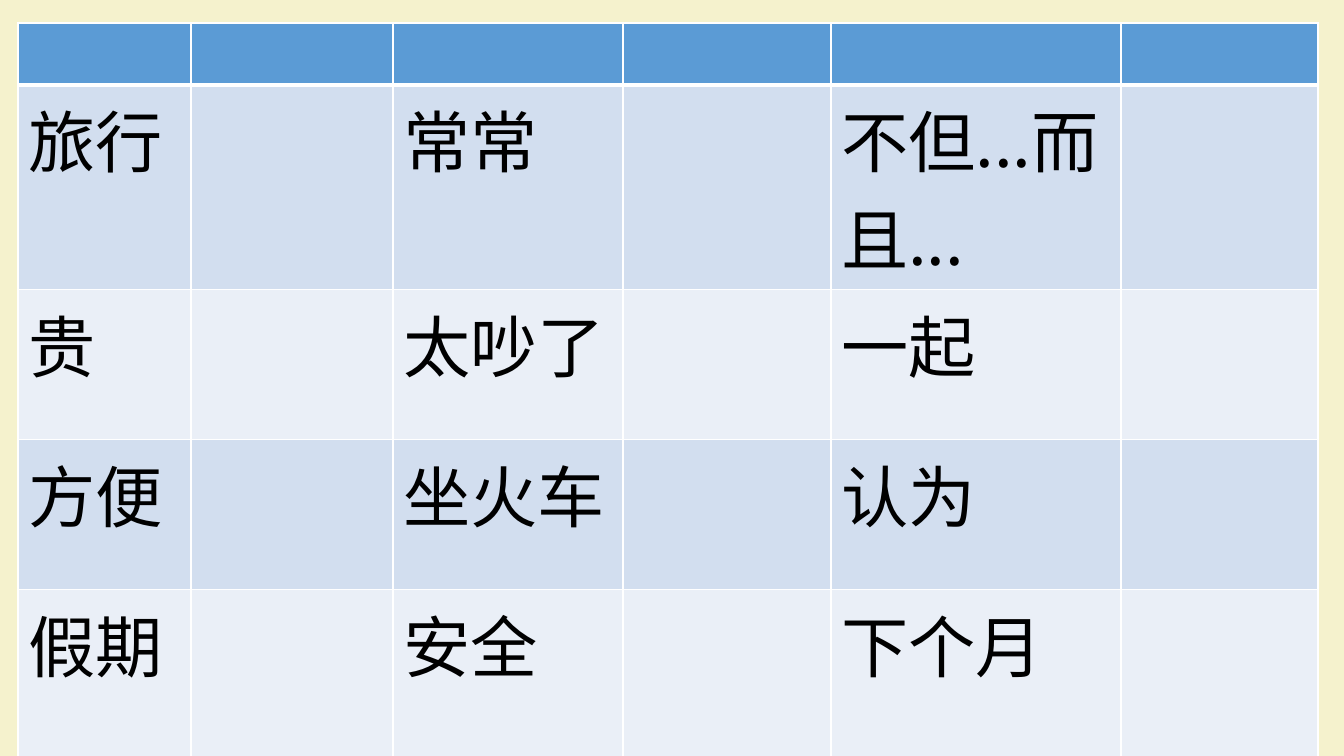
"""Builds a slide with a Chinese vocabulary table."""
from pptx import Presentation
from pptx.dml.color import RGBColor
from pptx.oxml.ns import qn
from pptx.util import Pt
from lxml.etree import SubElement

THEME = {
    "page": "F5F2CD", "head": "5B9BD5", "odd": "D2DEEF", "even": "EAEFF7",
    "line": "FFFFFF", "ink": "000000",
    "font": "Noto Sans CJK SC", "size": 48, "thin": 1, "thick": 3,
}
PX = 914400 / 100.8
WIDTHS = [173, 202, 230, 208, 290, 197]
HEIGHTS = [62, 169, 150, 150, 169]
WORDS = [
    ["旅行", "常常", "不但...而且..."],
    ["贵", "太吵了", "一起"],
    ["方便", "坐火车", "认为"],
    ["假期", "安全", "下个月"],
]


def px(count):
    return round(count * PX)


def edge(cell, side, width):
    line = SubElement(cell._tc.get_or_add_tcPr(), qn(f"a:ln{side}"), w=str(Pt(width)))
    fill = SubElement(line, qn("a:solidFill"))
    SubElement(fill, qn("a:srgbClr"), val=THEME["line"])


deck = Presentation()
deck.slide_width, deck.slide_height = px(1344), px(756)
slide = deck.slides.add_slide(deck.slide_layouts[6])
slide.background.fill.solid()
slide.background.fill.fore_color.rgb = RGBColor.from_string(THEME["page"])

frame = slide.shapes.add_table(
    len(HEIGHTS), len(WIDTHS), px(18), px(23), px(sum(WIDTHS)), px(sum(HEIGHTS)))
table = frame.table
for col, width in zip(table.columns, WIDTHS):
    col.width = px(width)

for i, height in enumerate(HEIGHTS):
    table.rows[i].height = px(height)
    shade = "head" if i == 0 else "odd" if i % 2 else "even"
    for j in range(len(WIDTHS)):
        cell = table.cell(i, j)
        for side in "LRTB":
            heavy = (i, side) in [(0, "B"), (1, "T")]
            edge(cell, side, THEME["thick" if heavy else "thin"])
        cell.fill.solid()
        cell.fill.fore_color.rgb = RGBColor.from_string(THEME[shade])
        if i > 0 and j % 2 == 0:
            run = cell.text_frame.paragraphs[0].add_run()
            run.text = WORDS[i - 1][j // 2]
            run.font.size = Pt(THEME["size"])
            run.font.color.rgb = RGBColor.from_string(THEME["ink"])
            run.font.name = THEME["font"]
            SubElement(run._r.get_or_add_rPr(), qn("a:ea"), typeface=THEME["font"])

deck.save("out.pptx")
